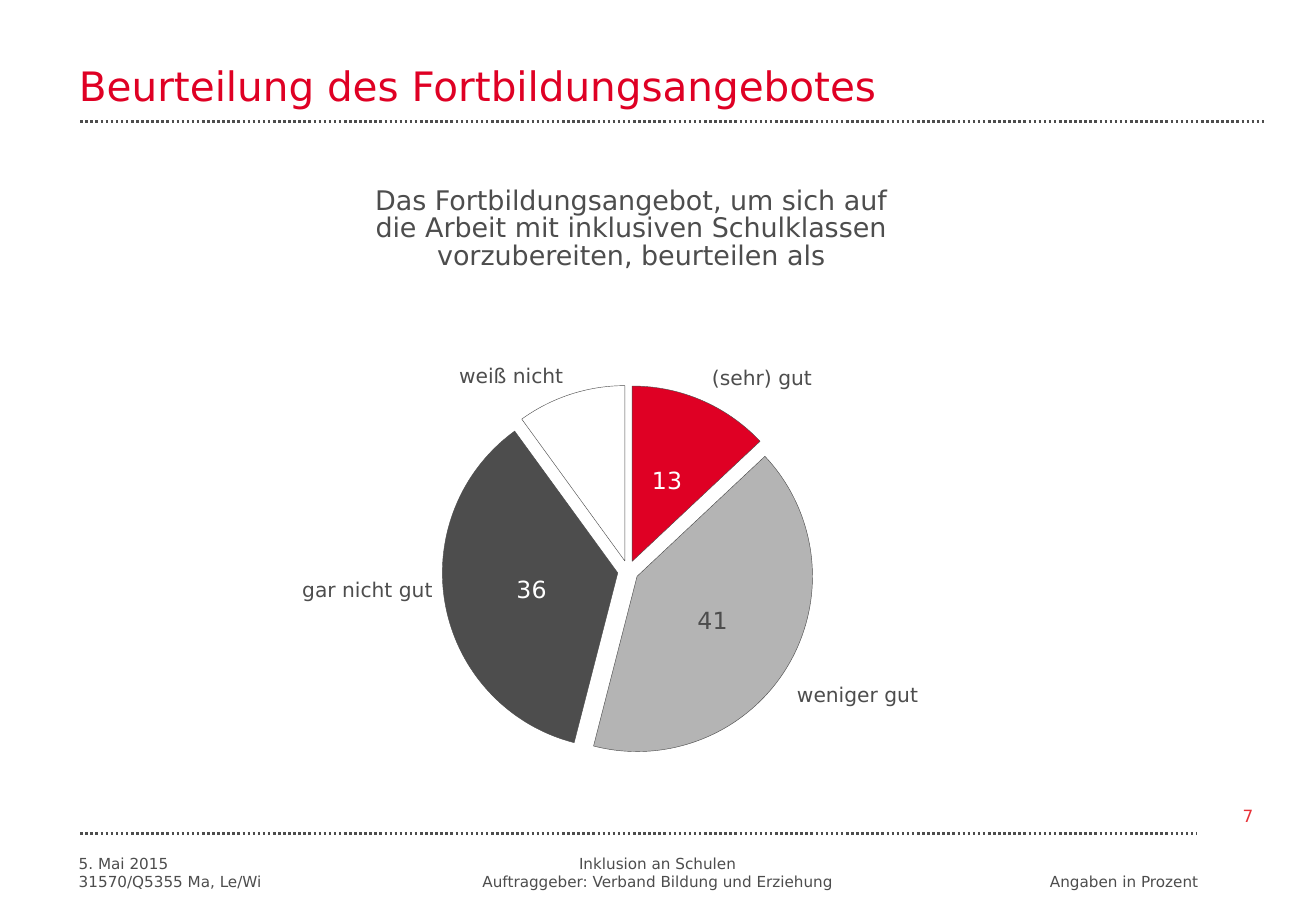
import pptx
import pptx.chart.data
import pptx.dml.color
import pptx.enum.chart
import pptx.enum.dml
import pptx.enum.shapes
import pptx.enum.text
import pptx.oxml
import pptx.oxml.ns
import pptx.util

WIDTH, HEIGHT = pptx.util.Inches(10.83), pptx.util.Inches(7.5)
FONT = "DejaVu Sans"
RED, DARK, GREY, WHITE = "DF0024", "4D4D4D", "B4B4B4", "FFFFFF"
PAGE_RED = "E73137"
MARGIN, FOOTER_TOP = 5.08, 93.07

ALIGN = pptx.enum.text.PP_ALIGN
ANCHOR = pptx.enum.text.MSO_ANCHOR
CENTER_LABEL = pptx.enum.chart.XL_LABEL_POSITION.CENTER

# answer, share in percent, slice colour, value colour (None: no value shown)
ANSWERS = [
    ("(sehr) gut", 13, RED, WHITE),
    ("weniger gut", 41, GREY, DARK),
    ("gar nicht gut", 36, DARK, WHITE),
    ("weiß nicht", 10, WHITE, None),
]


def col(percent):
    return round(WIDTH * percent / 100)


def row(percent):
    return round(HEIGHT * percent / 100)


def area(left, top, width, height):
    """Turn percentages of the slide into left, top, width and height."""
    return col(left), row(top), col(width), row(height)


def rgb(value):
    return pptx.dml.color.RGBColor.from_string(value)


def style_font(font, size, color):
    font.name = FONT
    font.size = pptx.util.Pt(size)
    font.color.rgb = rgb(color)


def write(shape, text, size=12, color=DARK, align=ALIGN.LEFT,
          anchor=ANCHOR.TOP, spacing=1.0, inset=None):
    """Fill a shape with one paragraph per line of text."""
    frame = shape.text_frame
    frame.text = text
    frame.word_wrap = False
    frame.auto_size = pptx.enum.text.MSO_AUTO_SIZE.SHAPE_TO_FIT_TEXT
    frame.vertical_anchor = anchor
    if inset is not None:
        frame.auto_size = pptx.enum.text.MSO_AUTO_SIZE.NONE
        frame.margin_left = frame.margin_right = inset
        frame.margin_top = frame.margin_bottom = inset
    for paragraph in frame.paragraphs:
        paragraph.alignment = align
        paragraph.line_spacing = spacing
        style_font(paragraph.font, size, color)


def add_text(slide, place, text, **style):
    write(slide.shapes.add_textbox(*area(*place)), text, **style)


def add_title(slide, place, text):
    title = slide.shapes.title
    title.left, title.top, title.width, title.height = area(*place)
    write(title, text, size=24, color=RED, anchor=ANCHOR.BOTTOM)


def add_dotted_rule(slide, left, right, top):
    rule = slide.shapes.add_connector(
        pptx.enum.shapes.MSO_CONNECTOR.STRAIGHT,
        col(left), row(top), col(right), row(top))
    rule.line.color.rgb = rgb(DARK)
    rule.line.width = pptx.util.Pt(1.5)
    rule.line.dash_style = pptx.enum.dml.MSO_LINE.ROUND_DOT
    properties = rule._element.spPr
    properties.append(properties.makeelement(pptx.oxml.ns.qn("a:effectLst")))


def chart_xml(markup):
    namespace = pptx.oxml.ns.nsdecls("c")
    tag, rest = markup.split(">", 1)
    return pptx.oxml.parse_xml(f"{tag} {namespace}>{rest}")


def set_plot_area(chart, left, top, width, height):
    plot_area = chart._chartSpace.xpath("c:chart/c:plotArea")[0]
    for layout in plot_area.xpath("c:layout"):
        plot_area.remove(layout)
    plot_area.insert(0, chart_xml(
        '<c:layout><c:manualLayout><c:layoutTarget val="inner"/>'
        '<c:xMode val="edge"/><c:yMode val="edge"/>'
        f'<c:x val="{left}"/><c:y val="{top}"/>'
        f'<c:w val="{width}"/><c:h val="{height}"/>'
        '</c:manualLayout></c:layout>'))


def outline(line):
    line.color.rgb = rgb(DARK)
    line.width = pptx.util.Pt(0.25)


def explode(series, percent):
    series._element.xpath("c:spPr")[0].addnext(
        chart_xml(f'<c:explosion><c:v/></c:explosion>'))
    explosion = series._element.xpath("c:explosion")[0]
    explosion.remove(explosion[0])
    explosion.set("val", str(percent))


def hide_value(series, index):
    series._element.xpath("c:dLbls")[0].insert(0, chart_xml(
        f'<c:dLbl><c:idx val="{index}"/><c:delete val="1"/></c:dLbl>'))


def add_pie(slide, place):
    data = pptx.chart.data.CategoryChartData()
    data.categories = [answer for answer, *_ in ANSWERS]
    data.add_series("Beurteilung", [share for _, share, *_ in ANSWERS])
    chart = slide.shapes.add_chart(
        pptx.enum.chart.XL_CHART_TYPE.PIE, *area(*place), data).chart
    chart.has_legend = False
    chart.has_title = False
    style_font(chart.font, 18, RED)
    set_plot_area(chart, 0.16, 0.08, 0.72, 0.78)

    chart.plots[0].vary_by_categories = True
    series = chart.plots[0].series[0]
    outline(series.format.line)
    explode(series, 6)
    labels = series.data_labels
    labels.show_value = True
    labels.position = CENTER_LABEL
    style_font(labels.font, 14, WHITE)

    for index, (_, _, fill, value_color) in enumerate(ANSWERS):
        point = series.points[index]
        point.format.fill.solid()
        point.format.fill.fore_color.rgb = rgb(fill)
        outline(point.format.line)
        if value_color is None:
            hide_value(series, index)
        elif value_color != WHITE:
            style_font(point.data_label.font, 14, value_color)
            point.data_label.position = CENTER_LABEL
    # Labels must follow the order of the slices
    label_list = series._element.xpath("c:dLbls")[0]
    own_labels = sorted(label_list.xpath("c:dLbl"),
                        key=lambda label: int(label.xpath("c:idx/@val")[0]))
    for position, label in enumerate(own_labels):
        label_list.insert(position, label)


def main():
    deck = pptx.Presentation()
    deck.slide_width, deck.slide_height = WIDTH, HEIGHT
    slide = deck.slides.add_slide(deck.slide_layouts[5])

    add_dotted_rule(slide, 6.1, 96.1, 13.33)
    add_dotted_rule(slide, 6.1, 90.95, 91.47)
    add_title(slide, (MARGIN, 6, 62.88, 6.67),
              "Beurteilung des Fortbildungsangebotes")
    add_text(slide, (27.24, 20, 41.46, 10.53),
             "Das Fortbildungsangebot, um sich auf\n"
             "die Arbeit mit inklusiven Schulklassen\n"
             "vorzubereiten, beurteilen als",
             size=16, align=ALIGN.CENTER, spacing=0.85)

    add_pie(slide, (27.33, 37.87, 39.24, 52.8))
    good, less_good, not_good, unknown = [answer for answer, *_ in ANSWERS]
    add_text(slide, (53.19, 39.87, 9.79, 3.6), good, spacing=0.85)
    add_text(slide, (59.65, 74.67, 11.17, 3.6), less_good, spacing=0.85)
    add_text(slide, (21.88, 63.07, 11.91, 3.6), not_good,
             align=ALIGN.RIGHT, spacing=0.85)
    add_text(slide, (33.98, 39.2, 9.79, 4), unknown)

    add_text(slide, (MARGIN, FOOTER_TOP, 16.25, 5.33),
             "5. Mai 2015\n31570/Q5355 Ma, Le/Wi", size=9)
    add_text(slide, (35.46, FOOTER_TOP, 28.99, 5.33),
             "Inklusion an Schulen\n"
             "Auftraggeber: Verband Bildung und Erziehung",
             size=9, align=ALIGN.CENTER)
    add_text(slide, (78.76, 95.07, 13.3, 3.33), "Angaben in Prozent",
             size=9, align=ALIGN.CENTER)
    add_text(slide, (92.8, 86.93, 4.06, 5.2), "7", size=10, color=PAGE_RED,
             align=ALIGN.CENTER, anchor=ANCHOR.MIDDLE, inset=0)

    deck.save("out.pptx")


if __name__ == "__main__":
    main()
